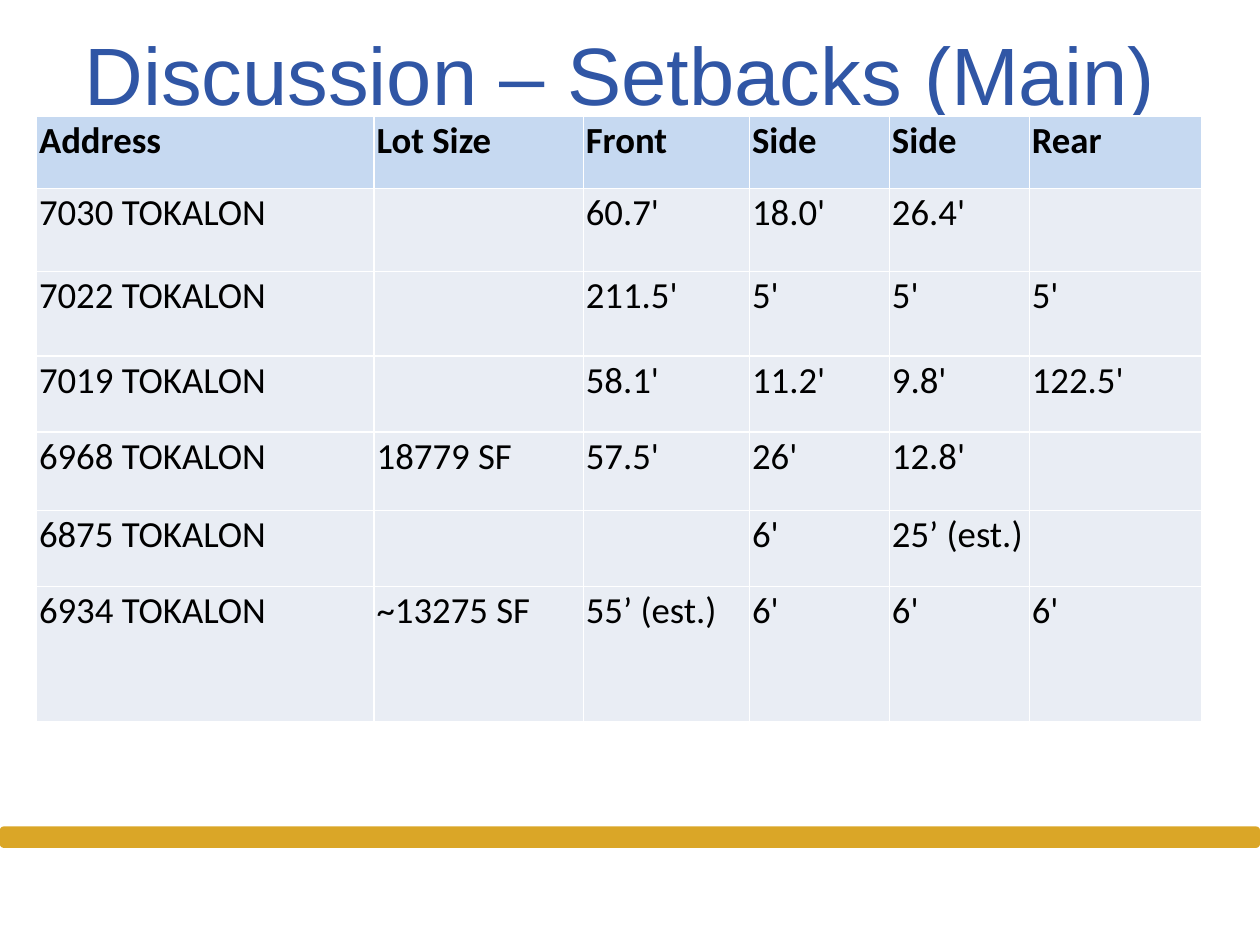
from dataclasses import dataclass

from lxml.etree import SubElement
from pptx import Presentation
from pptx.dml.color import RGBColor as RGB
from pptx.enum.shapes import MSO_SHAPE as Shape
from pptx.enum.text import MSO_ANCHOR as Anchor, MSO_AUTO_SIZE as AutoSize, PP_ALIGN as Align
from pptx.oxml.ns import qn
from pptx.util import Pt

TITLE = "Discussion – Setbacks (Main)"
HEADER = ("Address", "Lot Size", "Front", "Side", "Side", "Rear")
SETBACKS = [
    ("7030 TOKALON", "", "60.7'", "18.0'", "26.4'", ""),
    ("7022 TOKALON", "", "211.5'", "5'", "5'", "5'"),
    ("7019 TOKALON", "", "58.1'", "11.2'", "9.8'", "122.5'"),
    ("6968 TOKALON", "18779 SF", "57.5'", "26'", "12.8'", ""),
    ("6875 TOKALON", "", "", "6'", "25’ (est.)", ""),
    ("6934 TOKALON", "~13275 SF", "55’ (est.)", "6'", "6'", "6'"),
]
COLUMN_WIDTHS = (192.96, 119.52, 95.04, 79.92, 79.92, 98.64)
ROW_HEIGHTS = (41.4, 47.5, 48.3, 43.4, 44.9, 43.4, 77.4)
SLIDE_WIDTH, SLIDE_HEIGHT = 720, 540
LEFT, CONTENT_WIDTH = 20.9, 666.7
TITLE_TOP, TITLE_HEIGHT = 5.76, 72
TABLE_TOP = 66.2
BAR_TOP, BAR_HEIGHT = 472.3, 12.2


@dataclass(frozen=True)
class Theme:
    title_font: str = "Arial"
    title_size: float = 46.5
    title_color: str = "3056A5"
    table_font: str = "Calibri"
    table_size: float = 21
    text_color: str = "000000"
    header_fill: str = "C6D9F1"
    body_fill: str = "E9EDF4"
    border: str = "FFFFFF"
    border_width: float = 1
    bar: str = "DAA627"


THEME = Theme()


def add_run(paragraph, text, font, size, color, bold=False):
    run = paragraph.add_run()
    run.text = text
    run.font.name, run.font.size, run.font.bold = font, Pt(size), bold
    run.font.color.rgb = RGB.from_string(color)


def add_borders(cell):
    properties = cell._tc.get_or_add_tcPr()
    for position, side in enumerate(("a:lnL", "a:lnR", "a:lnT", "a:lnB")):
        line = SubElement(properties, qn(side), w=str(Pt(THEME.border_width)))
        properties.insert(position, line)
        fill = SubElement(line, qn("a:solidFill"))
        SubElement(fill, qn("a:srgbClr"), val=THEME.border)


def add_bar(slide):
    bar = slide.shapes.add_shape(Shape.ROUNDED_RECTANGLE, 0, Pt(BAR_TOP),
                                 Pt(SLIDE_WIDTH), Pt(BAR_HEIGHT))
    bar.shadow.inherit = False
    bar.fill.solid()
    bar.fill.fore_color.rgb = RGB.from_string(THEME.bar)
    bar.line.fill.background()


def add_setback_table(slide):
    rows = [HEADER, *SETBACKS]
    table = slide.shapes.add_table(len(rows), len(HEADER), Pt(LEFT), Pt(TABLE_TOP),
                                   Pt(CONTENT_WIDTH), Pt(sum(ROW_HEIGHTS))).table
    for column, width in zip(table.columns, COLUMN_WIDTHS):
        column.width = Pt(width)
    for row, height, texts in zip(table.rows, ROW_HEIGHTS, rows):
        row.height = Pt(height)
        is_header = texts is HEADER
        for cell, text in zip(row.cells, texts):
            cell.margin_left = cell.margin_right = cell.margin_top = Pt(1.44)
            cell.margin_bottom = 0
            cell.fill.solid()
            cell.fill.fore_color.rgb = RGB.from_string(
                THEME.header_fill if is_header else THEME.body_fill)
            add_borders(cell)
            if text:
                add_run(cell.text_frame.paragraphs[0], text, THEME.table_font,
                        THEME.table_size, THEME.text_color, is_header)


def fill_title(slide):
    title = slide.shapes.title
    title.left, title.top = Pt(LEFT), Pt(TITLE_TOP)
    title.width, title.height = Pt(CONTENT_WIDTH), Pt(TITLE_HEIGHT)
    frame = title.text_frame
    frame.word_wrap = True
    frame.auto_size = AutoSize.NONE
    frame.vertical_anchor = Anchor.MIDDLE
    heading = frame.paragraphs[0]
    heading.alignment = Align.CENTER
    add_run(heading, TITLE, THEME.title_font, THEME.title_size, THEME.title_color)


def main():
    deck = Presentation()
    deck.slide_width, deck.slide_height = Pt(SLIDE_WIDTH), Pt(SLIDE_HEIGHT)
    slide = deck.slides.add_slide(deck.slide_layouts[5])
    add_bar(slide)
    add_setback_table(slide)
    fill_title(slide)
    deck.save("out.pptx")


if __name__ == "__main__":
    main()
